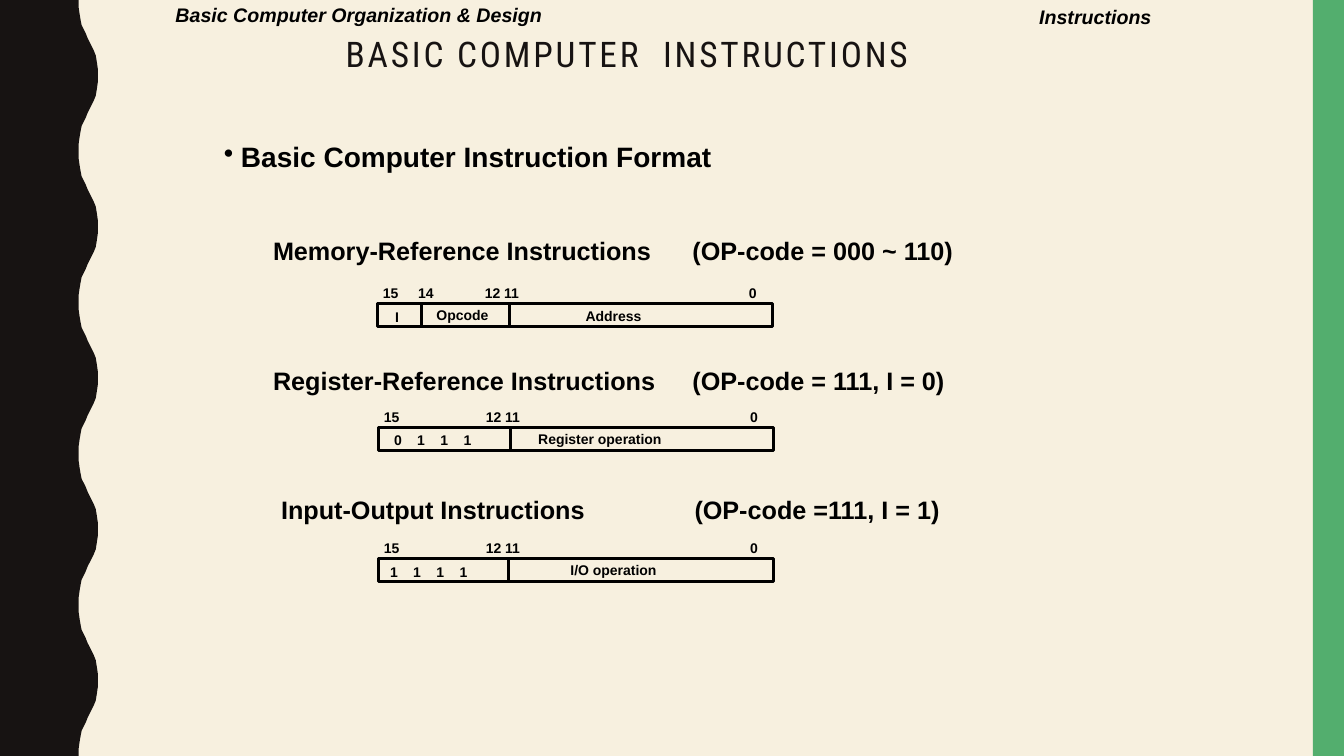
"""Build the slide on basic computer instruction formats."""
from lxml import etree
from pptx import Presentation
from pptx.dml.color import RGBColor
from pptx.enum.shapes import MSO_CONNECTOR, MSO_SHAPE
from pptx.enum.text import MSO_ANCHOR, PP_ALIGN
from pptx.oxml.ns import qn
from pptx.util import Inches, Pt

RECTANGLE = MSO_SHAPE.RECTANGLE
STRAIGHT = MSO_CONNECTOR.STRAIGHT
MIDDLE, TOP = MSO_ANCHOR.MIDDLE, MSO_ANCHOR.TOP
LEFT, RIGHT = PP_ALIGN.LEFT, PP_ALIGN.RIGHT
CREAM = RGBColor(0xF7, 0xF0, 0xDF)
INK = RGBColor(0x17, 0x13, 0x12)
GREEN = RGBColor(0x53, 0xAE, 0x6E)
BLACK = RGBColor(0, 0, 0)

presentation = Presentation()
presentation.slide_width = Inches(13.33)
presentation.slide_height = Inches(7.5)
slide = presentation.slides.add_slide(presentation.slide_layouts[6])
slide.background.fill.solid()
slide.background.fill.fore_color.rgb = CREAM


def add_text(text, left, top, width, height=0.27, size=10, font="Arial",
             color=BLACK, bold=True, italic=False, align=LEFT, anchor=TOP,
             inset=(0.1, 0.05), tabs=(), line_spacing=None, tracking=None,
             bullet_indent=None):
    """Add one line of text and return nothing."""
    shape = slide.shapes.add_textbox(Inches(left), Inches(top),
                                     Inches(width), Inches(height))
    frame = shape.text_frame
    frame.word_wrap = True
    frame.vertical_anchor = anchor
    frame.margin_left = Inches(0 if align == RIGHT else inset[0])
    frame.margin_right = Inches(inset[0] if align == RIGHT else 0)
    frame.margin_top = frame.margin_bottom = Inches(inset[1])
    paragraph = frame.paragraphs[0]
    paragraph.alignment = align
    if line_spacing:
        paragraph.line_spacing = line_spacing
    run = paragraph.add_run()
    run.text = text
    run.font.name, run.font.size = font, Pt(size)
    run.font.bold, run.font.italic = bold, italic
    run.font.color.rgb = color
    if tracking:
        run.font._element.set("spc", str(tracking * 100))
    properties = paragraph._p.get_or_add_pPr()
    if bullet_indent:
        properties.set("marL", str(Inches(bullet_indent)))
        properties.set("indent", str(-Inches(bullet_indent)))
        etree.SubElement(properties, qn("a:buChar"), char="•")
    if tabs:
        tab_list = etree.SubElement(properties, qn("a:tabLst"))
        for position in tabs:
            etree.SubElement(tab_list, qn("a:tab"),
                             pos=str(Inches(position)), algn="l")


HALF_WAVE = [(0.78, 0), (0.78, 0.07), (0.79, 0.14), (0.8, 0.2), (0.81, 0.25),
             (0.83, 0.29), (0.85, 0.33), (0.87, 0.38), (0.89, 0.42),
             (0.91, 0.46), (0.93, 0.5), (0.95, 0.55), (0.96, 0.61),
             (0.97, 0.68), (0.97, 0.75)]
WAVE_HEIGHT = 1.5
wave = HALF_WAVE + [(x, WAVE_HEIGHT - y) for x, y in HALF_WAVE[-2::-1]]
edge = [(Inches(x), Inches(y + WAVE_HEIGHT * index))
        for index in range(5) for x, y in wave]
builder = slide.shapes.build_freeform(0, 0)
builder.add_line_segments(edge + [(0, Inches(7.5))], close=True)
wavy_band = builder.convert_to_shape()
green_band = slide.shapes.add_shape(RECTANGLE, Inches(13.02), 0,
                                    Inches(0.31), Inches(7.5))
for band, color in ((wavy_band, INK), (green_band, GREEN)):
    band.shadow.inherit = False
    band.fill.solid()
    band.fill.fore_color.rgb = color
    band.line.fill.background()

add_text("BASIC COMPUTER  INSTRUCTIONS", 3.33, 0.33, 6.81, 0.46, size=25.2,
         font="Roboto Condensed", color=INK, bold=False, anchor=MIDDLE,
         line_spacing=0.87, tracking=2)
add_text("Basic Computer Organization & Design", 1.67, 0, 3.8, 0.29, size=14,
         italic=True, inset=(0.07, 0.03))
add_text("Instructions", 10.2, 0, 1.32, 0.33, size=14, italic=True, align=RIGHT)
add_text("Basic Computer Instruction Format", 2.15, 1.35, 5.02, 0.4, size=20,
         inset=(0.07, 0.03), line_spacing=1.02, bullet_indent=0.17)

HEADINGS = [
    ("Memory-Reference Instructions\t(OP-code = 000 ~ 110)", 2.61, 2.29, 4.16),
    ("Register-Reference Instructions\t(OP-code = 111, I = 0)", 2.61, 3.58, 4.16),
    ("Input-Output Instructions\t(OP-code =111, I = 1)", 2.69, 4.86, 4.1),
]
for text, left, top, tab in HEADINGS:
    add_text(text, left, top, 7, 0.4, size=18, tabs=[tab])

BIT_TABS = [0.23, 0.46, 0.69]
FORMATS = [
    (3.74, 3.01, 3.01, [4.18, 5.05], "15\t14",
     [("I", 3.82, 3.01, 0.24), ("Opcode", 4.23, 2.99, 0.72),
      ("Address", 5.71, 3, 0.76)]),
    (3.75, 4.24, 4.23, [5.06], "15",
     [("0\t1\t1\t1", 3.81, 4.23, 0.97),
      ("Register operation", 5.24, 4.22, 1.44)]),
    (3.75, 5.54, 5.55, [5.04], "15",
     [("1\t1\t1\t1", 3.77, 5.54, 0.97), ("I/O operation", 5.56, 5.52, 1.06)]),
]
for left, top, divider_top, dividers, high_bits, fields in FORMATS:
    word = slide.shapes.add_shape(RECTANGLE, Inches(left), Inches(top),
                                  Inches(3.92), Inches(0.23))
    word.shadow.inherit = False
    word.fill.background()
    outlines = [word]
    for x in dividers:
        divider = slide.shapes.add_connector(
            STRAIGHT, Inches(x), Inches(divider_top),
            Inches(x), Inches(divider_top + 0.23))
        etree.SubElement(divider._element.spPr, qn("a:effectLst"))
        outlines.append(divider)
    for outline in outlines:
        outline.line.color.rgb = BLACK
        outline.line.width = Pt(2)
    labels_top = top - 0.24
    add_text(high_bits, left - 0.04, labels_top, 0.7, tabs=[0.35])
    add_text("12 11", left + 0.97, labels_top, 0.55)
    add_text("0", left + 3.59, labels_top, 0.28)
    for text, field_left, field_top, width in fields:
        add_text(text, field_left, field_top, width,
                 tabs=BIT_TABS if "\t" in text else ())

presentation.save("out.pptx")
